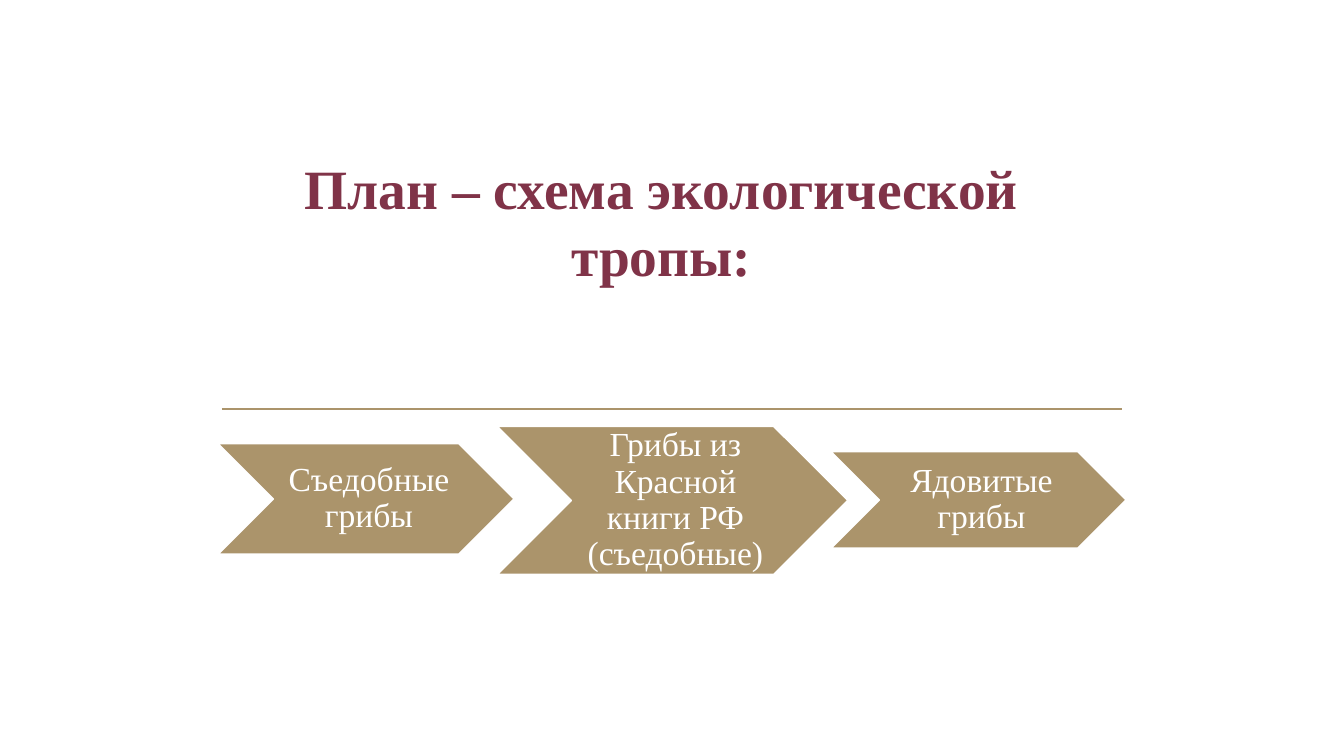
from pptx import Presentation
from pptx.dml.color import RGBColor
from pptx.enum.shapes import MSO_CONNECTOR, MSO_SHAPE
from pptx.enum.text import MSO_ANCHOR, PP_ALIGN
from pptx.oxml.ns import qn
from pptx.util import Inches, Pt
from lxml.etree import SubElement

FONT = "Times New Roman"
COLORS = {"tan": "AB946B", "wine": "803348", "white": "FFFFFF"}


def color(name):
    return RGBColor.from_string(COLORS[name])


def add_label(box, text, size, tint, anchor, bold=False):
    """Add a text box with one centred run; box is left, top, width, height."""
    frame = slide.shapes.add_textbox(*map(Inches, box)).text_frame
    frame.word_wrap = True
    frame.vertical_anchor = anchor
    par = frame.paragraphs[0]
    par.alignment = PP_ALIGN.CENTER
    run = par.add_run()
    run.text = text
    run.font.name = FONT
    run.font.size = Pt(size)
    run.font.bold = bold
    run.font.color.rgb = color(tint)
    return frame


deck = Presentation()
deck.slide_width = Inches(13.33)
deck.slide_height = Inches(7.5)
slide = deck.slides.add_slide(deck.slide_layouts[6])

# Rule and title
rule = slide.shapes.add_connector(
    MSO_CONNECTOR.STRAIGHT, Inches(2.2), Inches(4.06), Inches(11.13), Inches(4.06))
rule.line.color.rgb = color("tan")
rule.line.width = Pt(1.25)
SubElement(rule._element.spPr, qn("a:effectLst"))

add_label((2.41, 1.44, 8.3, 1.46), "План – схема экологической тропы:",
          39.6, "wine", MSO_ANCHOR.BOTTOM, bold=True)

# Stops of the trail: text, left, top, width, height
stops = [
    ("Съедобные грибы", 2.16, 4.4, 2.94, 1.1),
    ("Грибы из Красной книги РФ (съедобные)", 4.93, 4.23, 3.48, 1.47),
    ("Ядовитые грибы", 8.24, 4.48, 2.93, 0.96),
]
for text, left, top, width, height in stops:
    arrow = slide.shapes.add_shape(
        MSO_SHAPE.CHEVRON, *map(Inches, (left, top, width, height)))
    arrow.shadow.inherit = False
    arrow.fill.solid()
    arrow.fill.fore_color.rgb = color("tan")
    arrow.line.color.rgb = color("white")
    arrow.line.width = Pt(1.25)

    # The label sits between the notch and the point, each half a height deep
    frame = add_label((left + height / 2, top, width - height, height),
                      text, 24, "white", MSO_ANCHOR.MIDDLE)
    frame.margin_left = Inches(0.1)
    frame.margin_top = frame.margin_right = frame.margin_bottom = Inches(0.04)
    frame.paragraphs[0].line_spacing = 0.9

deck.save("out.pptx")
